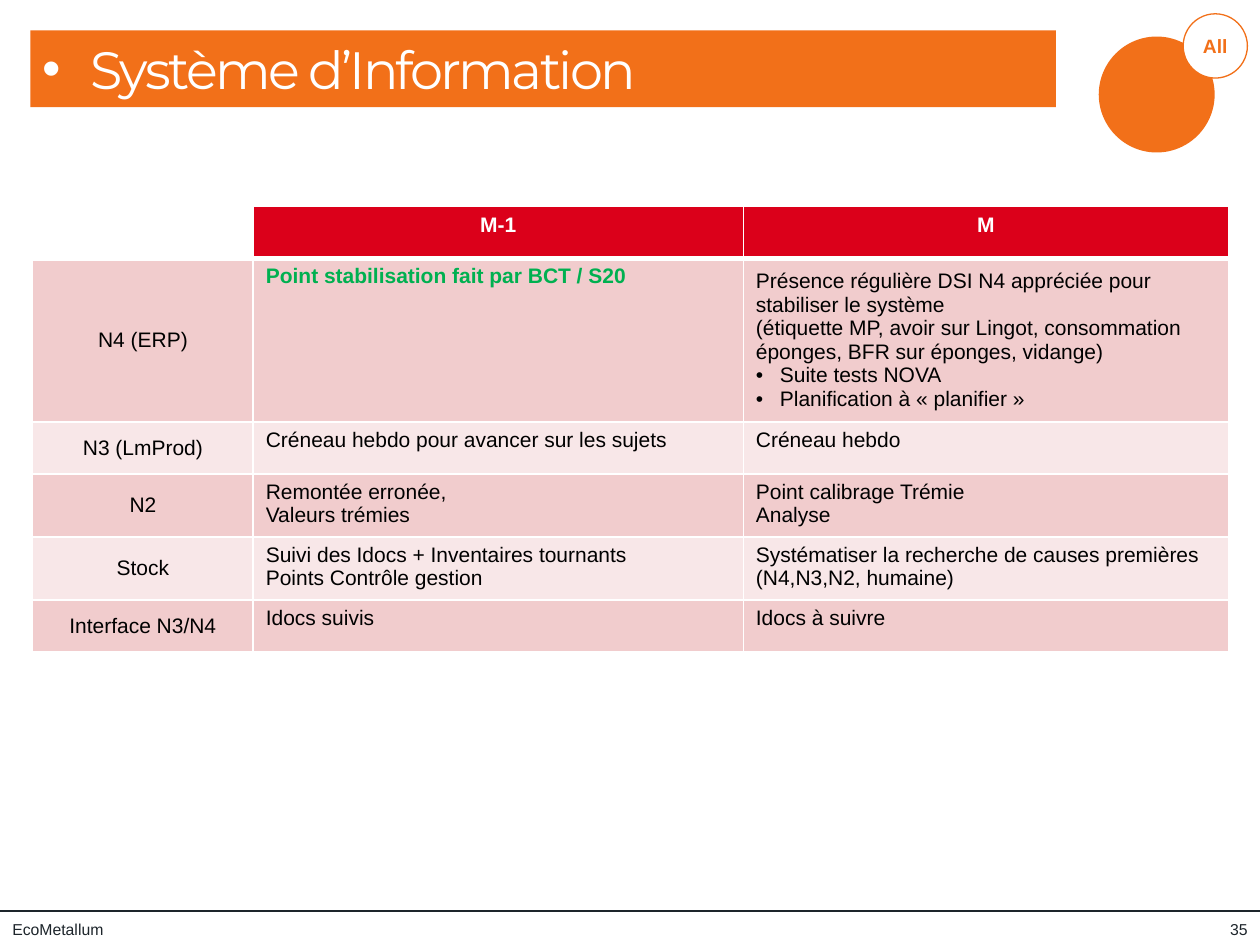
from lxml import etree
from pptx import Presentation
from pptx.dml.color import RGBColor
from pptx.enum import shapes, text
from pptx.oxml import ns
from pptx.util import Inches, Pt

ORANGE = RGBColor(0xF2, 0x70, 0x19)
RED = RGBColor(0xDB, 0x00, 0x1A)
PINK = RGBColor(0xF1, 0xCC, 0xCD)
PALE_PINK = RGBColor(0xF8, 0xE7, 0xE8)
GREEN = RGBColor(0x00, 0xB0, 0x50)
DARK = RGBColor(0x1D, 0x25, 0x2B)
BLACK = RGBColor(0, 0, 0)
WHITE = RGBColor(0xFF, 0xFF, 0xFF)

LEFT, CENTER, RIGHT = text.PP_ALIGN.LEFT, text.PP_ALIGN.CENTER, text.PP_ALIGN.RIGHT
MIDDLE, TOP = text.MSO_ANCHOR.MIDDLE, text.MSO_ANCHOR.TOP


def add_run(p, words, size, color, bold=False, font="Arial", align=LEFT):
    p.alignment = align
    r = p.add_run()
    r.text = words
    r.font.name = font
    r.font.size = Pt(size)
    r.font.bold = bold
    r.font.color.rgb = color
    return r


def add_bullet(p, indent):
    pPr = p._p.get_or_add_pPr()
    pPr.set("marL", str(Inches(indent)))
    pPr.set("indent", str(-Inches(indent)))
    etree.SubElement(pPr, ns.qn("a:buFont"), typeface="Arial")
    etree.SubElement(pPr, ns.qn("a:buChar"), char="•")


prs = Presentation()
prs.slide_width, prs.slide_height = Inches(10), Inches(7.5)
s = prs.slides.add_slide(prs.slide_layouts[5])

# Footer
rule = s.shapes.add_connector(shapes.MSO_CONNECTOR.STRAIGHT,
                              Inches(0), Inches(7.23), Inches(10), Inches(7.23))
rule.line.color.rgb = DARK
rule.line.width = Pt(1.5)
etree.SubElement(rule._element.spPr, ns.qn("a:effectLst"))

for words, left, width, align in [("EcoMetallum", 0, 3.44, LEFT), ("35", 9.51, 0.49, RIGHT)]:
    box = s.shapes.add_textbox(Inches(left), Inches(7.25), Inches(width), Inches(0.25))
    tf = box.text_frame
    tf.word_wrap = True
    tf.vertical_anchor = MIDDLE
    add_run(tf.paragraphs[0], words, 9, DARK, align=align)

# Badge
disc = s.shapes.add_shape(shapes.MSO_SHAPE.OVAL,
                          Inches(8.72), Inches(0.29), Inches(0.92), Inches(0.92))
disc.shadow.inherit = False
disc.fill.solid()
disc.fill.fore_color.rgb = ORANGE
disc.line.fill.background()

badge = s.shapes.add_shape(shapes.MSO_SHAPE.OVAL,
                           Inches(9.39), Inches(0.11), Inches(0.51), Inches(0.51))
badge.shadow.inherit = False
badge.fill.solid()
badge.fill.fore_color.rgb = WHITE
badge.line.color.rgb = ORANGE
badge.line.width = Pt(0.75)
tf = badge.text_frame
tf.margin_left = tf.margin_right = 0
tf.vertical_anchor = MIDDLE
add_run(tf.paragraphs[0], "All", 11, ORANGE, bold=True, align=CENTER)

# Title
title = s.shapes.title
title.left, title.top = Inches(0.24), Inches(0.24)
title.width, title.height = Inches(8.14), Inches(0.61)
title.fill.solid()
title.fill.fore_color.rgb = ORANGE
tf = title.text_frame
tf.auto_size = text.MSO_AUTO_SIZE.NONE
tf.vertical_anchor = MIDDLE
p = tf.paragraphs[0]
add_bullet(p, 0.38)
r = add_run(p, "Système d’Information", 30, WHITE, font="Montserrat")
r.font._element.set("spc", "-150")

# Table: each cell is a list of paragraphs, and "• " marks a bulleted one
rows = [
    [[], ["M-1"], ["M"]],
    [["N4 (ERP)"], ["Point stabilisation fait par BCT / S20"],
     ["Présence régulière DSI N4 appréciée pour stabiliser le système",
      "(étiquette MP, avoir sur Lingot, consommation éponges, BFR sur éponges, vidange)",
      "• Suite tests NOVA", "• Planification à « planifier »"]],
    [["N3 (LmProd)"], ["Créneau hebdo pour avancer sur les sujets"], ["Créneau hebdo"]],
    [["N2"], ["Remontée erronée,", "Valeurs trémies"], ["Point calibrage Trémie", "Analyse"]],
    [["Stock"], ["Suivi des Idocs + Inventaires tournants", "Points Contrôle gestion"],
     ["Systématiser la recherche de causes premières (N4,N3,N2, humaine)"]],
    [["Interface N3/N4"], ["Idocs suivis"], ["Idocs à suivre"]],
]
col_widths = [1.75, 3.89, 3.85]
row_height = 0.41
table = s.shapes.add_table(len(rows), len(col_widths), Inches(0.26), Inches(1.64),
                           Inches(sum(col_widths)), Inches(row_height * len(rows))).table
table.horz_banding = False
for col, width in zip(table.columns, col_widths):
    col.width = Inches(width)

for i, row in enumerate(rows):
    for j, paragraphs in enumerate(row):
        cell = table.cell(i, j)
        header, label = i == 0, j == 0
        cell.vertical_anchor = MIDDLE if i and (label or len(paragraphs) > 2) else TOP

        tcPr = cell._tc.get_or_add_tcPr()
        for side in "LRTB":
            thick = (i, side) in [(0, "B"), (1, "T")]
            ln = etree.SubElement(tcPr, ns.qn("a:ln" + side), w=str(Pt(3 if thick else 1)))
            fill = etree.SubElement(ln, ns.qn("a:solidFill"))
            etree.SubElement(fill, ns.qn("a:srgbClr"), val=str(WHITE))
        cell.fill.solid()
        if header:
            cell.fill.fore_color.rgb = WHITE if label else RED
        else:
            cell.fill.fore_color.rgb = PINK if i % 2 else PALE_PINK

        highlight = (i, j) == (1, 1)
        color = WHITE if header else GREEN if highlight else BLACK
        tf = cell.text_frame
        for n, words in enumerate(paragraphs):
            p = tf.add_paragraph() if n else tf.paragraphs[0]
            if words.startswith("• "):
                add_bullet(p, 0.19)
            add_run(p, words.removeprefix("• "), 12, color, bold=header or highlight,
                    align=CENTER if header or label else LEFT)

prs.save("out.pptx")
